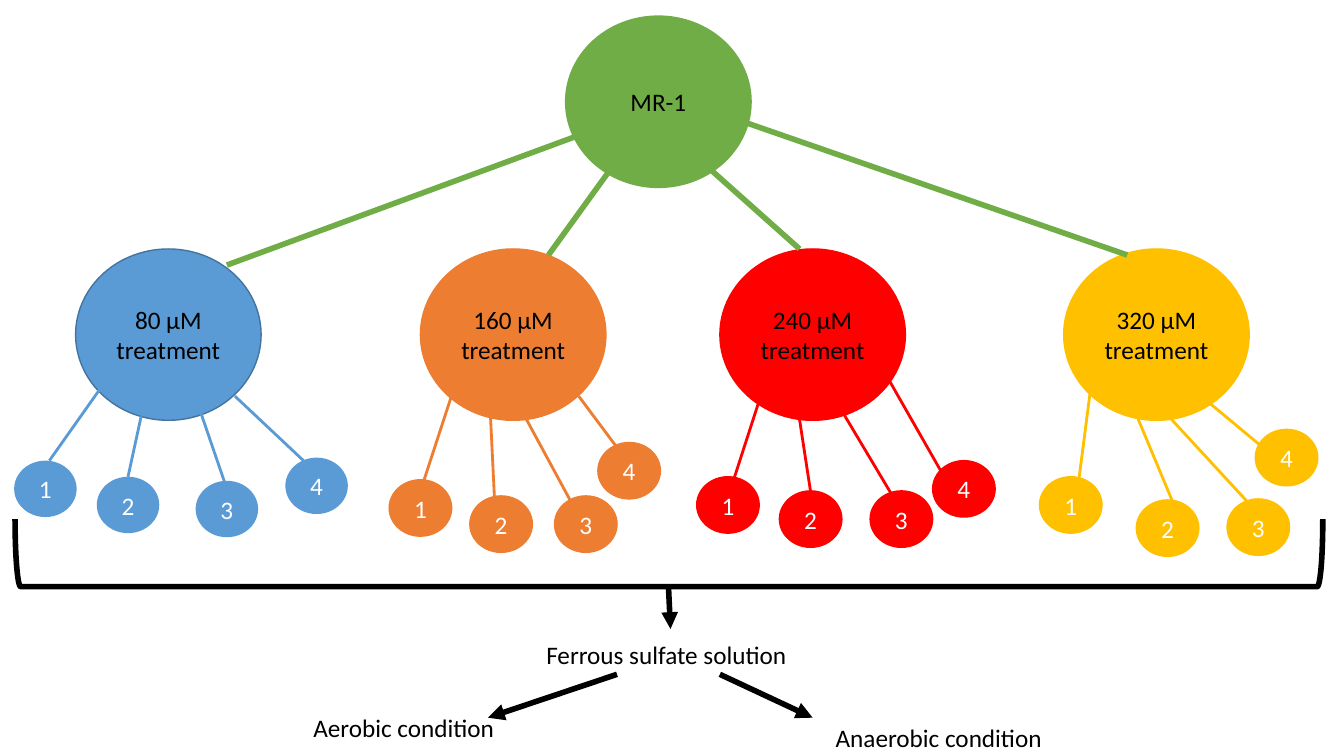
from lxml import etree
from pptx import Presentation
from pptx import util as u
from pptx.dml.color import RGBColor
from pptx.enum import shapes, text
from pptx.oxml.ns import qn

WIDTH, HEIGHT = 13.33, 7.5
BLACK, WHITE, GREEN = "000000", "FFFFFF", "70AD47"
LARGE, SMALL = (1.84, 1.7), (0.62, 0.56)
ROOT_AT = (5.61, 0.16)
TREATMENT_TOP = 2.47

# Replicates are (circle left, circle top, spoke start, spoke end), numbered in order.
TREATMENTS = [
    dict(label="80 µM treatment", left=0.75, fill="5B9BD5", outline="43739E", small_outline=None,
         branch=((5.83, 1.31), (2.25, 2.63)),
         replicates=[(0.14, 4.57, (1.02, 3.82), (0.49, 4.57)),
                     (0.96, 4.73, (1.4, 4.13), (1.27, 4.73)),
                     (1.94, 4.77, (1.98, 4.06), (2.24, 4.82)),
                     (2.83, 4.54, (2.33, 3.93), (3.01, 4.57))]),
    dict(label="160 µM treatment", left=4.17, fill="ED7D31", outline="ED7D31", small_outline="ED7D31",
         branch=((6.12, 1.59), (5.44, 2.53)),
         replicates=[(3.86, 4.76, (4.51, 3.83), (4.2, 4.78)),
                     (4.66, 4.92, (4.86, 4.03), (4.91, 5.06)),
                     (5.5, 4.92, (5.21, 4.14), (5.67, 4.99)),
                     (5.93, 4.39, (5.74, 3.93), (6.12, 4.44))]),
    dict(label="240 µM treatment", left=7.14, fill="FF0000", outline="FF0000", small_outline="FF0000",
         branch=((6.91, 1.56), (7.93, 2.47)),
         replicates=[(6.91, 4.73, (7.58, 3.82), (7.27, 4.78)),
                     (7.73, 4.87, (7.91, 4.03), (8.04, 4.88)),
                     (8.63, 4.87, (8.34, 4.06), (8.96, 5.1)),
                     (9.25, 4.57, (8.8, 3.74), (9.33, 4.67))]),
    dict(label="320 µM treatment", left=10.55, fill="FFC000", outline="FFC000", small_outline="FFC000",
         branch=((7.32, 1.19), (11.18, 2.53)),
         replicates=[(10.31, 4.73, (10.81, 3.91), (10.7, 4.76)),
                     (11.27, 4.96, (11.26, 4.09), (11.69, 5.12)),
                     (12.17, 4.95, (11.6, 4.14), (12.42, 5.03)),
                     (12.45, 4.26, (11.95, 3.96), (12.55, 4.46))]),
]
BRACKET = (6.3, -1, 0.67, 12.97)
ARROWS = [((6.63, 5.82), (6.65, 6.24)),
          ((6.12, 6.69), (4.84, 7.12)),
          ((7.14, 6.69), (8.06, 7.12))]
CAPTIONS = [("Ferrous sulfate solution", (5.32, 6.29, 2.74, 0.4), True),
            ("Anaerobic condition", (8.19, 7.12, 2.27, 0.4), False),
            ("Aerobic condition", (3.01, 7.02, 2.02, 0.4), False)]


def color(value):
    return RGBColor.from_string(value)


def inches(*lengths):
    return [u.Inches(length) for length in lengths]


def write(shape, words, ink=BLACK, align=None, anchor=None, wrap=True):
    frame = shape.text_frame
    frame.word_wrap = wrap
    frame.vertical_anchor = anchor
    para = frame.paragraphs[0]
    para.alignment = align
    span = para.add_run()
    span.text = words
    span.font.name = "Calibri"
    span.font.size = u.Pt(18)
    span.font.color.rgb = color(ink)


def set_line(line, ink, weight):
    if ink is None:
        line.fill.background()
    else:
        line.color.rgb = color(ink)
        line.width = u.Pt(weight)


def add_circle(page, words, at, size, fill, outline, ink):
    circle = page.shapes.add_shape(shapes.MSO_SHAPE.OVAL, *inches(*at, *size))
    circle.shadow.inherit = False
    circle.fill.solid()
    circle.fill.fore_color.rgb = color(fill)
    set_line(circle.line, outline, 1)
    write(circle, words, ink=ink, align=text.PP_ALIGN.CENTER, anchor=text.MSO_ANCHOR.MIDDLE)


def add_line(page, start, end, ink, weight, arrow=False):
    line = page.shapes.add_connector(shapes.MSO_CONNECTOR.STRAIGHT, *inches(*start, *end))
    set_line(line.line, ink, weight)
    if arrow:
        etree.SubElement(line.line._get_or_add_ln(), qn("a:tailEnd"), type="triangle")
    etree.SubElement(line._element.spPr, qn("a:effectLst"))


def add_treatment(page, treatment):
    """Draw one treatment circle, its branch from the root and its replicates."""
    fill = treatment["fill"]
    add_circle(page, treatment["label"], (treatment["left"], TREATMENT_TOP), LARGE,
               fill, treatment["outline"], BLACK)
    add_line(page, *treatment["branch"], GREEN, 4)
    for number, (left, top, start, end) in enumerate(treatment["replicates"], 1):
        add_line(page, start, end, fill, 2)
        add_circle(page, str(number), (left, top), SMALL, fill, treatment["small_outline"], WHITE)


def add_bracket(page):
    bracket = page.shapes.add_shape(shapes.MSO_SHAPE.LEFT_BRACKET, *inches(*BRACKET))
    bracket.rotation = 270
    bracket.shadow.inherit = False
    bracket.fill.background()
    set_line(bracket.line, BLACK, 4)


def main():
    deck = Presentation()
    deck.slide_width, deck.slide_height = inches(WIDTH, HEIGHT)
    page = deck.slides.add_slide(deck.slide_layouts[6])
    add_circle(page, "MR-1", ROOT_AT, LARGE, GREEN, GREEN, BLACK)
    for treatment in TREATMENTS:
        add_treatment(page, treatment)
    add_bracket(page)
    for start, end in ARROWS:
        add_line(page, start, end, BLACK, 4, arrow=True)
    for words, area, wrap in CAPTIONS:
        box = page.shapes.add_textbox(*inches(*area))
        write(box, words, wrap=wrap)
        box.text_frame.auto_size = text.MSO_AUTO_SIZE.SHAPE_TO_FIT_TEXT
    deck.save("out.pptx")


if __name__ == "__main__":
    main()
